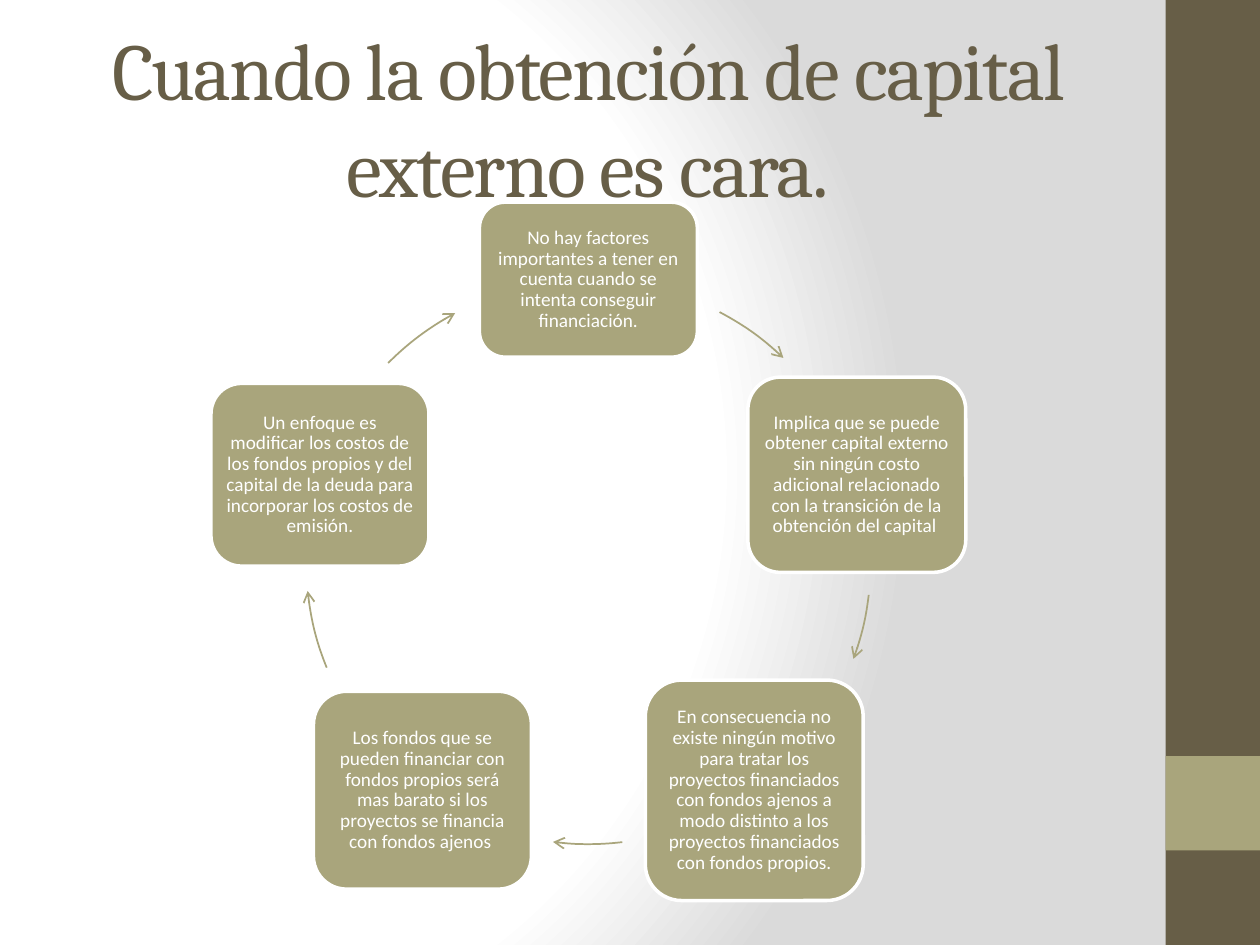
from dataclasses import dataclass
from math import cos, radians, sin

from lxml import etree
from pptx import Presentation
from pptx.dml.color import RGBColor
from pptx.enum.shapes import MSO_SHAPE as Shape
from pptx.enum.text import MSO_ANCHOR as Anchor, MSO_AUTO_SIZE as AutoSize, PP_ALIGN as Align
from pptx.oxml import parse_xml
from pptx.oxml.ns import nsdecls, qn
from pptx.util import Inches, Pt


@dataclass(frozen=True)
class Theme:
    dark: str = "675E47"
    accent: str = "A9A57C"
    light: str = "FFFFFF"
    shade: str = "DADADA"
    title_font: str = "Cambria"
    body_font: str = "Calibri"
    title_size: float = 46
    body_size: float = 11


TITLE = "Cuando la obtención de capital externo es cara."

# Text, box height, and start and end angle of the arrow that follows the box
STEPS = [
    ("No hay factores importantes a tener en cuenta cuando se intenta conseguir "
     "financiación.", 1.23, 27.7, 43.7),
    ("Implica que se puede obtener capital externo sin ningún costo adicional "
     "relacionado con la transición de la obtención del capital ", 1.55, 96.7, 110.1),
    ("En consecuencia no existe ningún motivo para tratar los proyectos financiados "
     "con fondos ajenos a modo distinto a los proyectos financiados con fondos propios.",
     1.75, 173.1, 187.2),
    ("Los fondos que se pueden financiar con fondos propios será mas barato si los "
     "proyectos se financia con fondos ajenos ", 1.57, 248, 264.1),
    ("Un enfoque es modificar los costos de los fondos propios y del capital de la "
     "deuda para incorporar los costos de emisión.", 1.45, 314.8, 331.8),
]
CENTER_X, CENTER_Y, RADIUS = 4.67, 4.46, 2.24
BOX_WIDTH = 1.73


def write(frame, text, *, font, size, color, spacing=None, line_spacing=None):
    """Put centred text in a frame."""
    frame.word_wrap = True
    frame.auto_size = AutoSize.NONE
    frame.vertical_anchor = Anchor.MIDDLE
    para = frame.paragraphs[0]
    para.alignment = Align.CENTER
    if line_spacing:
        para.line_spacing = line_spacing
    span = para.add_run()
    span.text = text
    span.font.name = font
    span.font.size = Pt(size)
    span.font.color.rgb = RGBColor.from_string(color)
    if spacing:
        span.font._element.set("spc", str(int(spacing * 100)))


def on_circle(angle):
    """Point on the cycle, with the angle clockwise from the top."""
    turn = radians(angle)
    return CENTER_X + RADIUS * sin(turn), CENTER_Y - RADIUS * cos(turn)


class SlideBuilder:
    def __init__(self, slide, theme):
        self.slide = slide
        self.theme = theme

    def background(self):
        self.slide.background.fill.solid()
        properties = self.slide.element.find(".//" + qn("p:bgPr"))
        stops = [(0, self.theme.light), (75, self.theme.light), (100, self.theme.shade)]
        stop_xml = "".join(
            f'<a:gs pos="{place * 1000}"><a:srgbClr val="{color}"/></a:gs>'
            for place, color in stops)
        properties.replace(properties[0], parse_xml(
            f'<a:gradFill {nsdecls("a")} rotWithShape="1"><a:gsLst>{stop_xml}</a:gsLst>'
            '<a:path path="circle"><a:fillToRect l="20000" t="50000" r="100000" b="50000"/>'
            '</a:path></a:gradFill>'))

    def title(self, text, left, top, width, height):
        box = self.slide.shapes.title
        box.left, box.top, box.width, box.height = map(Inches, (left, top, width, height))
        write(box.text_frame, text, font=self.theme.title_font,
              size=self.theme.title_size, color=self.theme.dark, spacing=-1)

    def block(self, kind, left, top, width, height, fill=None, line=None, weight=2):
        shape = self.slide.shapes.add_shape(kind, *map(Inches, (left, top, width, height)))
        shape.shadow.inherit = False
        if fill:
            shape.fill.solid()
            shape.fill.fore_color.rgb = RGBColor.from_string(fill)
        else:
            shape.fill.background()
        if line:
            shape.line.color.rgb = RGBColor.from_string(line)
            shape.line.width = Pt(weight)
        else:
            shape.line.fill.background()
        return shape

    def step(self, text, angle, height):
        x, y = on_circle(angle)
        box = self.block(Shape.ROUNDED_RECTANGLE, x - BOX_WIDTH / 2, y - height / 2,
                         BOX_WIDTH, height, self.theme.accent, self.theme.light)
        frame = box.text_frame
        frame.margin_left = frame.margin_right = Inches(0.05)
        frame.margin_top = frame.margin_bottom = Inches(0.05)
        write(frame, text, font=self.theme.body_font, size=self.theme.body_size,
              color=self.theme.light, line_spacing=0.9)

    def arc_arrow(self, start, end):
        arrow = self.block(Shape.ARC, CENTER_X - RADIUS, CENTER_Y - RADIUS,
                           2 * RADIUS, 2 * RADIUS, line=self.theme.accent, weight=1)
        # Arc angles run clockwise from the right, in units of 0.6 per degree
        for index, angle in enumerate((start, end)):
            arrow.adjustments[index] = (angle - 90) % 360 * 0.6
        etree.SubElement(arrow.line._get_or_add_ln(), qn("a:tailEnd"), type="arrow")


def main():
    deck = Presentation()
    deck.slide_width, deck.slide_height = Inches(10), Inches(7.5)
    theme = Theme()
    page = SlideBuilder(deck.slides.add_slide(deck.slide_layouts[5]), theme)

    # Background and side band
    page.background()
    page.block(Shape.RECTANGLE, 9.25, 0, 0.75, 7.5, theme.dark)
    page.block(Shape.RECTANGLE, 9.25, 6, 0.75, 0.75, theme.accent)

    page.title(TITLE, 0.5, 0.3, 8.33, 1.25)

    # Cycle of steps, evenly spaced around the circle
    for index, (text, height, start, end) in enumerate(STEPS):
        page.step(text, index * 360 / len(STEPS), height)
        page.arc_arrow(start, end)

    deck.save("out.pptx")


if __name__ == "__main__":
    main()
